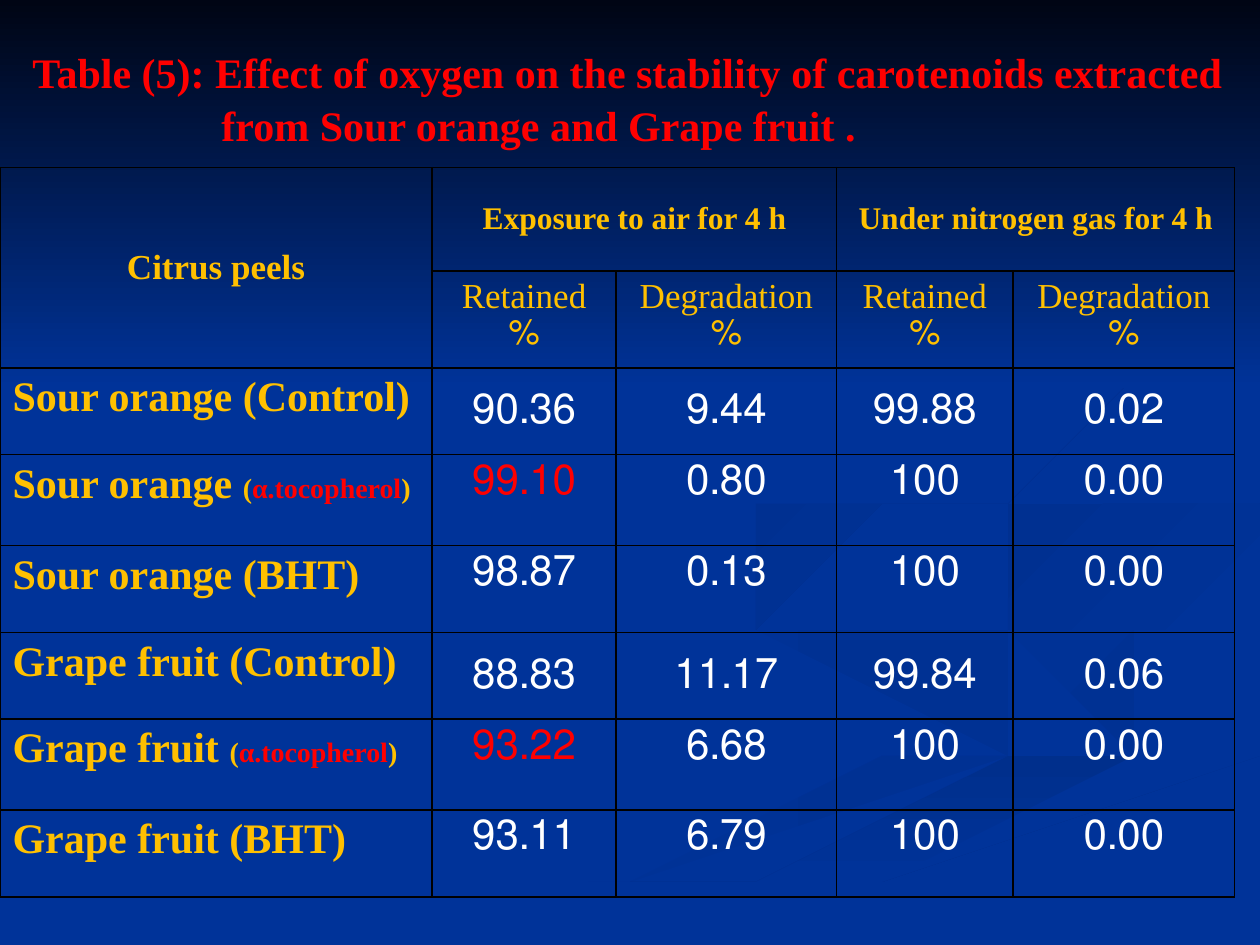
from typing import NamedTuple

from lxml import etree
from pptx import Presentation
from pptx.dml.color import RGBColor
from pptx.enum.shapes import MSO_SHAPE
from pptx.enum.text import MSO_ANCHOR, PP_ALIGN
from pptx.oxml.ns import qn
from pptx.util import Inches, Pt

RECT = MSO_SHAPE.RECTANGLE
TOP, MIDDLE = MSO_ANCHOR.TOP, MSO_ANCHOR.MIDDLE
LEFT, CENTER = PP_ALIGN.LEFT, PP_ALIGN.CENTER
FONT = "Times New Roman"
BLUE, GOLD, RED, WHITE, BLACK = "003399", "FFC000", "FF0000", "FFFFFF", "000000"


class Wave(NamedTuple):
    """An outline in inches, shaded from one colour to another."""
    start: str
    end: str
    angle: int
    points: list[tuple[float, float]]


class Row(NamedTuple):
    fruit: str
    note: str
    values: list[str]


WAVES = [
    Wave(BLUE, "003193", 0, [
        (7.8, 5.5), (6.4, 5.1), (5.75, 4.6), (5.9, 4.9), (7.5, 5.4), (7.85, 5.7),
        (7.1, 6.05), (5, 6.6), (3, 7.49), (3.6, 7.49), (5.3, 6.75), (7.7, 6.1), (8, 5.8)]),
    Wave(BLUE, "003193", 45, [
        (9.43, 5.7), (9, 5.4), (7.6, 5), (7.24, 4.64), (7.5, 5),
        (9, 5.57), (9.18, 5.8), (8.94, 6.05), (9.3, 5.9)]),
    Wave("002F8C", BLUE, 90, [
        (5.03, 7.49), (5.7, 7.49), (7.2, 6.8), (9.98, 6.1), (9.98, 5.81), (7.6, 6.5), (6, 7.05)]),
    Wave(BLUE, BLUE, 0, [
        (7.25, 4.64), (7.6, 5), (9.2, 5.45), (9.43, 5.75), (8.9, 6.05), (6.6, 6.7),
        (4.77, 7.49), (5.2, 7.47), (7, 6.7), (9.99, 5.8), (9.99, 5.4), (8.3, 5),
        (7.82, 4.6), (8.4, 4.3), (9.99, 4), (9.99, 3.87), (7.9, 4.2)]),
    Wave("003091", BLUE, 45, [
        (7.81, 4.6), (7.9, 4.8), (8.26, 4.96), (8.05, 4.74), (8.4, 4.48),
        (9.98, 4.2), (9.98, 4.02), (8.3, 4.3)]),
    Wave("002F8E", BLUE, 45, [
        (6.8, 4.3), (8.3, 4), (8.94, 3.4), (8.5, 2.8), (7.62, 2.33), (8.6, 2.9),
        (8.89, 3.3), (8.4, 3.8), (6.2, 4.27), (5.77, 4.62), (6.22, 5), (5.93, 4.7)]),
]

COLS = [3.43, 1.46, 1.75, 1.4, 1.76]
HEADS = [0.82, 0.77]
TALL, SHORT = 0.72, 0.69
CONTROL, MARKED, BHT = "Control", "α.tocopherol", "BHT"
ROWS = [
    Row("Sour orange", CONTROL, ["90.36", "9.44", "99.88", "0.02"]),
    Row("Sour orange", MARKED, ["99.10", "0.80", "100", "0.00"]),
    Row("Sour orange", BHT, ["98.87", "0.13", "100", "0.00"]),
    Row("Grape fruit", CONTROL, ["88.83", "11.17", "99.84", "0.06"]),
    Row("Grape fruit", MARKED, ["93.22", "6.68", "100", "0.00"]),
    Row("Grape fruit", BHT, ["93.11", "6.79", "100", "0.00"]),
]


def tint(code: str) -> RGBColor:
    return RGBColor.from_string(code)


def style(font, size: int, color: str, bold: bool) -> None:
    font.name, font.size, font.bold = FONT, Pt(size), bold
    font.color.rgb = tint(color)


def shade(shape, start: str, end: str, angle: int) -> None:
    """Fill a shape with a clockwise gradient and drop its line and shadow."""
    shape.shadow.inherit = False
    shape.line.fill.background()
    shape.fill.gradient()
    shape.fill.gradient_angle = -angle % 360
    for stop, color in zip(shape.fill.gradient_stops, (start, end)):
        stop.color.rgb = tint(color)


def draw_wave(slide, wave: Wave) -> None:
    pen = slide.shapes.build_freeform(*wave.points[0], scale=Inches(1))
    pen.add_line_segments(wave.points[1:], close=True)
    shade(pen.convert_to_shape(), wave.start, wave.end, wave.angle)


def draw_title(slide) -> None:
    box = slide.shapes.add_textbox(Inches(0.16), Inches(0.28), Inches(9.77), Inches(1.31))
    frame = box.text_frame
    frame.word_wrap, frame.vertical_anchor = True, TOP
    frame.margin_top = Inches(0.09)
    frame.text = ("Table (5): Effect of oxygen on the stability of carotenoids extracted\n"
                  "from Sour orange and Grape fruit .")
    for line in frame.paragraphs:
        style(line.font, 24, RED, True)
    line.space_before = Pt(1.5)
    line._p.get_or_add_pPr().set("marL", str(Inches(1.5)))


def frame_cell(cell) -> None:
    """Outline a cell in black and leave it unfilled."""
    props = cell._tc.get_or_add_tcPr()
    for side in ("a:lnL", "a:lnR", "a:lnT", "a:lnB"):
        edge = etree.SubElement(props, qn(side), w=str(Pt(1)))
        fill = etree.SubElement(edge, qn("a:solidFill"))
        etree.SubElement(fill, qn("a:srgbClr"), val=BLACK)
    cell.fill.background()


def write(cell, text: str, size: int, color: str, bold: bool, anchor) -> None:
    """Put centred right-to-left text in a cell."""
    cell.text, cell.vertical_anchor = text, anchor
    para = cell.text_frame.paragraphs[0]
    para.alignment = CENTER
    para._p.get_or_add_pPr().set("rtl", "1")
    style(para.font, size, color, bold)


def write_label(cell, row: Row) -> None:
    para = cell.text_frame.paragraphs[0]
    para.alignment = LEFT
    parts = [(f"{row.fruit} ({row.note})", 24, GOLD)]
    if row.note == MARKED:
        parts = [(f"{row.fruit} ", 24, GOLD), ("(", 16, GOLD),
                 (row.note, 16, RED), (")", 16, GOLD)]
    for text, size, color in parts:
        run = para.add_run()
        run.text = text
        style(run.font, size, color, True)


def draw_table(slide) -> None:
    heights = HEADS + [TALL if row.note == MARKED else SHORT for row in ROWS]
    table = slide.shapes.add_table(len(heights), len(COLS), 0, Inches(1.33),
                                   Inches(sum(COLS)), Inches(sum(heights))).table
    table.first_row = table.horz_banding = False
    for col, width in zip(table.columns, COLS):
        col.width = Inches(width)
    for line, height in zip(table.rows, heights):
        line.height = Inches(height)
    for cell in table.iter_cells():
        frame_cell(cell)

    table.cell(0, 0).merge(table.cell(1, 0))
    write(table.cell(0, 0), "Citrus peels", 20, GOLD, True, MIDDLE)
    for col, text in ((1, "Exposure to air for 4 h"), (3, "Under nitrogen gas for 4 h")):
        table.cell(0, col).merge(table.cell(0, col + 1))
        write(table.cell(0, col), text, 18, GOLD, True, MIDDLE)
        write(table.cell(1, col), "Retained %", 20, GOLD, False, TOP)
        write(table.cell(1, col + 1), "Degradation %", 20, GOLD, False, TOP)

    for r, row in enumerate(ROWS, len(HEADS)):
        write_label(table.cell(r, 0), row)
        anchor = MIDDLE if row.note == CONTROL else TOP
        for c, value in enumerate(row.values, 1):
            color = RED if row.note == MARKED and c == 1 else WHITE
            write(table.cell(r, c), value, 24, color, False, anchor)


def main() -> None:
    deck = Presentation()
    deck.slide_width, deck.slide_height = Inches(10), Inches(7.5)
    slide = deck.slides.add_slide(deck.slide_layouts[6])
    back = slide.background.fill
    back.solid()
    back.fore_color.rgb = tint(BLUE)
    for wave in WAVES:
        draw_wave(slide, wave)
    sky = slide.shapes.add_shape(RECT, 0, 0, Inches(10), Inches(3.08))
    shade(sky, "000514", BLUE, 90)
    draw_title(slide)
    draw_table(slide)
    deck.save("out.pptx")


if __name__ == "__main__":
    main()
